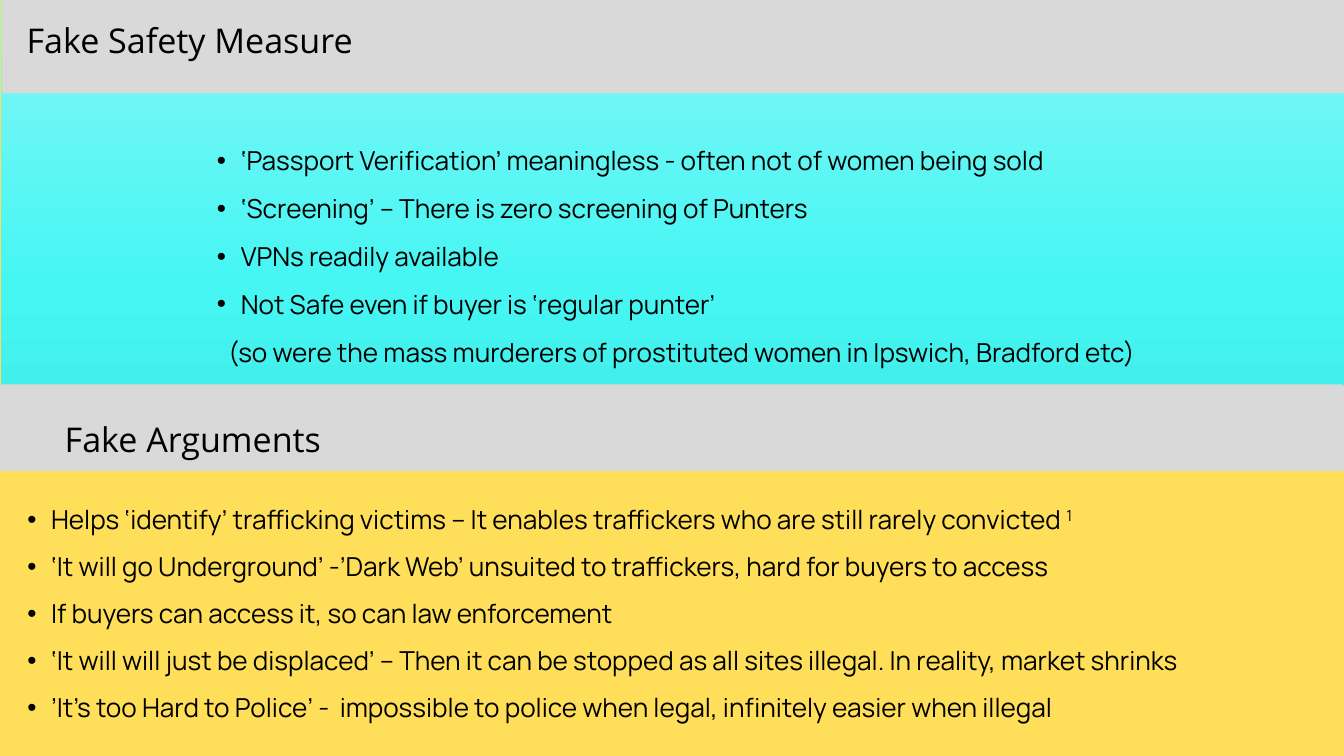
import copy
from dataclasses import dataclass

import pptx
import pptx.dml.color
import pptx.enum.shapes
import pptx.enum.text
import pptx.oxml
import pptx.oxml.ns
import pptx.util

ALIGN = pptx.enum.text.PP_ALIGN
PX = 9525  # EMU in one px; the slide is 1920 by 1080 px


@dataclass(frozen=True)
class Theme:
    background: str = "FFDE59"
    band: str = "D9D9D9"
    text: str = "000000"
    gradient: tuple = ((0, "82F6F6"), (0.69, "45F6F3"), (1, "41EDE9"))
    heading_font: str = "Open Sans"
    heading_size: float = 36.5
    heading_spacing: float = 51
    list_font: str = "Manrope"
    list_size: float = 28


THEME = Theme()

SAFETY_POINTS = [
    "‘Passport Verification’ meaningless - often not of women being sold",
    "‘Screening’ – There is zero screening of Punters",
    "VPNs readily available",
    "Not Safe even if buyer is ‘regular punter’",
]
SAFETY_REMARK = "(so were the mass murderers of prostituted women in Ipswich, Bradford etc)"
ARGUMENT_POINTS = [
    "Helps ‘identify’ trafficking victims – It enables traffickers who are still rarely convicted ",
    "‘It will go Underground’ -’Dark Web’ unsuited to traffickers, hard for buyers to access",
    "If buyers can access it, so can law enforcement",
    "‘It will will just be displaced’ – Then it can be stopped as all sites illegal. "
    "In reality, market shrinks",
    "’It’s too Hard to Police’ -  impossible to police when legal, infinitely easier when illegal",
]


def rgb(value):
    return pptx.dml.color.RGBColor.from_string(value)


def emu(box):
    return [pptx.util.Emu(length * PX) for length in box]


def place_text(slide, shape, box):
    """Move a text shape to its box, in front of the panels, without insets."""
    shape.left, shape.top, shape.width, shape.height = emu(box)
    slide.shapes._spTree.append(shape._element)
    frame = shape.text_frame
    frame.word_wrap = True
    frame.auto_size = pptx.enum.text.MSO_AUTO_SIZE.NONE
    frame.vertical_anchor = pptx.enum.text.MSO_ANCHOR.TOP
    frame.margin_left = frame.margin_top = frame.margin_right = frame.margin_bottom = 0


def format_paragraph(paragraph, font, size, spacing, alignment):
    paragraph.alignment = alignment
    paragraph.line_spacing = spacing
    paragraph.space_before = paragraph.space_after = pptx.util.Pt(0)
    for run in paragraph.runs:
        run.font.name = font
        run.font.size = pptx.util.Pt(size)
        run.font.color.rgb = rgb(THEME.text)


def set_indent(paragraph, margin, first_line, bullet):
    properties = paragraph._p.get_or_add_pPr()
    properties.set("marL", str(margin * PX))
    properties.set("indent", str(first_line * PX))
    mark = '<a:buChar %s char="•"/>' if bullet else "<a:buNone %s/>"
    if bullet:
        properties.append(pptx.oxml.parse_xml(
            '<a:buFont %s typeface="Arial"/>' % pptx.oxml.ns.nsdecls("a")))
    properties.append(pptx.oxml.parse_xml(mark % pptx.oxml.ns.nsdecls("a")))


def add_panel(slide, box):
    panel = slide.shapes.add_shape(
        pptx.enum.shapes.MSO_SHAPE.ROUNDED_RECTANGLE, *emu(box))
    panel.adjustments[0] = 4 / box[3]
    panel.shadow.inherit = False
    panel.line.fill.background()
    return panel


def add_band(slide, box):
    band = add_panel(slide, box)
    band.fill.solid()
    band.fill.fore_color.rgb = rgb(THEME.band)


def add_gradient_panel(slide, box):
    fill = add_panel(slide, box).fill
    fill.gradient()
    fill.gradient_angle = 270
    first_stop = fill.gradient_stops[0]._gs
    first_stop.addnext(copy.deepcopy(first_stop))
    for stop, (position, color) in zip(fill.gradient_stops, THEME.gradient):
        stop.position = position
        stop.color.rgb = rgb(color)


def write_heading(slide, shape, box, text, alignment):
    place_text(slide, shape, box)
    shape.text_frame.text = text
    format_paragraph(shape.text_frame.paragraphs[0], THEME.heading_font, THEME.heading_size,
                     pptx.util.Pt(THEME.heading_spacing), alignment)


def write_list(slide, shape, box, points, spacing, remark=None):
    place_text(slide, shape, box)
    frame = shape.text_frame
    frame.text = "\n".join(points + ([remark] if remark else []))
    for index, paragraph in enumerate(frame.paragraphs):
        paragraph.level = 1
        format_paragraph(paragraph, THEME.list_font, THEME.list_size, spacing, ALIGN.JUSTIFY)
        if index < len(points):
            set_indent(paragraph, 68, -34, bullet=True)
        else:
            set_indent(paragraph, 50, 0, bullet=False)


def add_footnote_mark(paragraph, mark):
    run = paragraph.add_run()
    run.text = mark
    format_paragraph(paragraph, THEME.list_font, THEME.list_size,
                     paragraph.line_spacing, paragraph.alignment)
    run.font._element.set("baseline", "30000")


def add_safety_section(slide, left, top):
    # Gradient panel under the header band
    add_gradient_panel(slide, (left + 1, top, 1919, 596))
    add_band(slide, (left + 3, top - 6, 1920, 139))
    # Title and points
    write_heading(slide, slide.shapes.title, (left + 38, top + 18, 1222, 66),
                  "Fake Safety Measure", ALIGN.LEFT)
    write_list(slide, slide.placeholders[1], (left + 276, top + 183, 1938, 338),
               SAFETY_POINTS, pptx.util.Pt(51.3), SAFETY_REMARK)


def add_arguments_section(slide, left, top):
    # Header band and heading
    add_band(slide, (left, top, 1920, 124))
    heading_box = (left - 8, top + 39, 567, 66)
    heading = slide.shapes.add_textbox(*emu(heading_box))
    write_heading(slide, heading, heading_box, "Fake Arguments", ALIGN.CENTER)
    # Points, the first with a footnote mark
    points = slide.placeholders[2]
    write_list(slide, points, (left + 5, top + 148, 1938, 334), ARGUMENT_POINTS, 1.5)
    add_footnote_mark(points.text_frame.paragraphs[0], "1")


def main():
    presentation = pptx.Presentation()
    presentation.slide_width, presentation.slide_height = emu((1920, 1080))
    slide = presentation.slides.add_slide(presentation.slide_layouts[3])
    slide.background.fill.solid()
    slide.background.fill.fore_color.rgb = rgb(THEME.background)
    add_safety_section(slide, 0, 0)
    add_arguments_section(slide, 0, 549)
    presentation.save("out.pptx")


if __name__ == "__main__":
    main()
